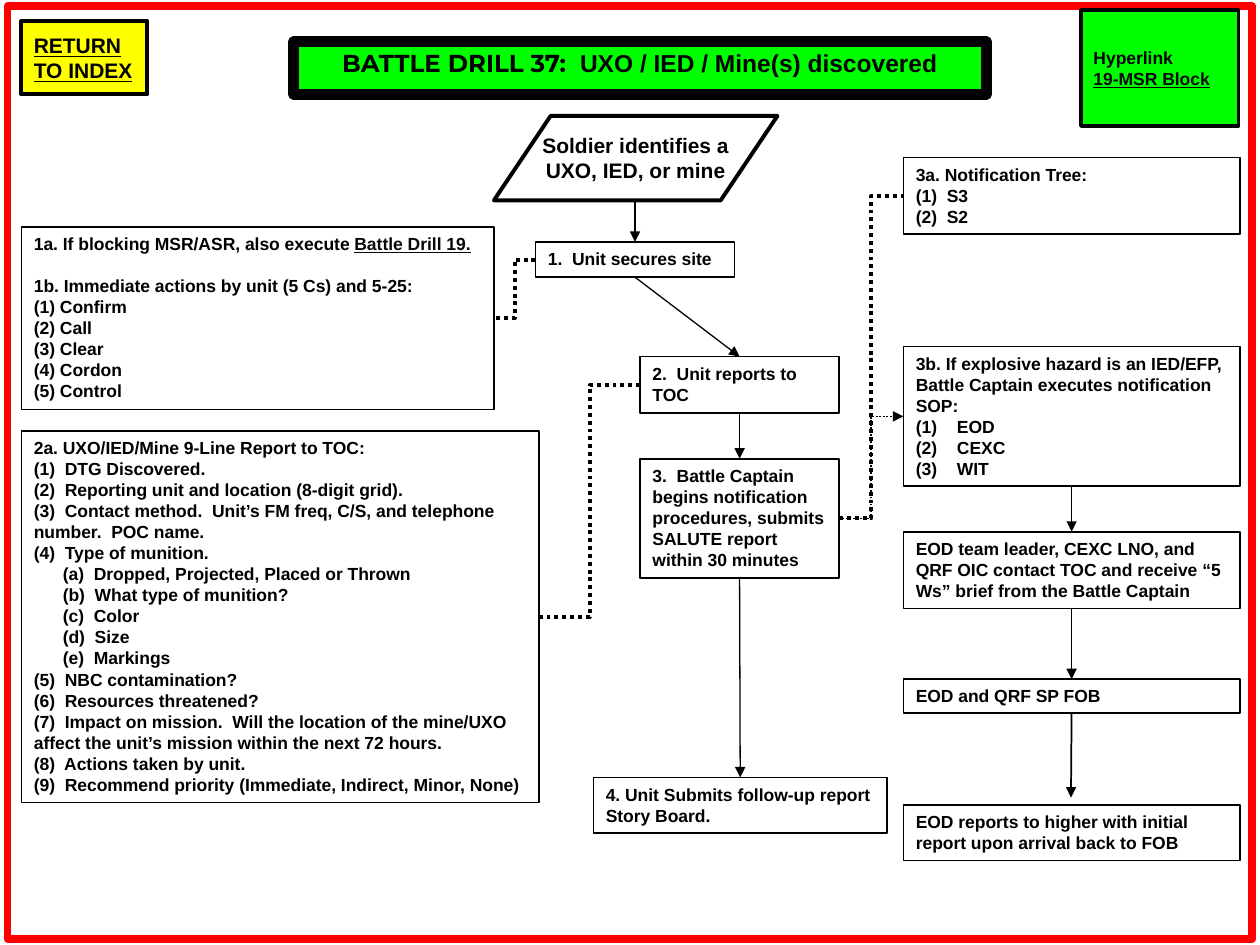
from lxml import etree
from pptx import Presentation
from pptx.dml.color import RGBColor
from pptx.enum.dml import MSO_LINE
from pptx.enum.shapes import MSO_CONNECTOR, MSO_SHAPE
from pptx.enum.text import MSO_ANCHOR, MSO_AUTO_SIZE, PP_ALIGN
from pptx.oxml.ns import qn
from pptx.util import Inches, Pt

RECT, PARALLELOGRAM = MSO_SHAPE.RECTANGLE, MSO_SHAPE.FLOWCHART_DATA
STRAIGHT, ELBOW = MSO_CONNECTOR.STRAIGHT, MSO_CONNECTOR.ELBOW
DOTTED = MSO_LINE.ROUND_DOT
LEFT, CENTER = PP_ALIGN.LEFT, PP_ALIGN.CENTER
TOP, MIDDLE = MSO_ANCHOR.TOP, MSO_ANCHOR.MIDDLE
GROW, FIXED = MSO_AUTO_SIZE.SHAPE_TO_FIT_TEXT, MSO_AUTO_SIZE.NONE
BLACK = RGBColor(0x00, 0x00, 0x00)
LINK = RGBColor(0x08, 0x08, 0x08)
WHITE = RGBColor(0xFF, 0xFF, 0xFF)
RED = RGBColor(0xFF, 0x00, 0x00)
YELLOW = RGBColor(0xFF, 0xFF, 0x00)
GREEN = RGBColor(0x00, 0xFF, 0x00)
TOP_SIDE, LEFT_SIDE, BOTTOM_SIDE, RIGHT_SIDE = range(4)


def add_run(p, text, size=10, font="Arial", color=BLACK, underline=None):
    r = p.add_run()
    r.text = text
    r.font.size, r.font.name, r.font.bold = Pt(size), font, True
    r.font.color.rgb = color
    r.font.underline = underline


def indent(p, left, hanging=0.0, numbered=False):
    pPr = p._p.get_or_add_pPr()
    pPr.set("marL", str(Inches(left)))
    pPr.set("indent", str(Inches(-hanging)))
    if numbered:
        etree.SubElement(pPr, qn("a:buFont")).set("typeface", "Arial")
        etree.SubElement(pPr, qn("a:buAutoNum")).set("type", "arabicParenBoth")


class Flowchart:
    def __init__(self, slide):
        self.slide = slide

    def shape(self, at, kind=RECT, fill=None, line=BLACK, width=1):
        sp = self.slide.shapes.add_shape(kind, *map(Inches, at))
        sp.shadow.inherit = False
        if fill is None:
            sp.fill.background()
        else:
            sp.fill.solid()
            sp.fill.fore_color.rgb = fill
        sp.line.color.rgb = line
        sp.line.width = Pt(width)
        return sp

    def fill_text(self, sp, paragraphs, align=LEFT, **fmt):
        """Each paragraph is a string or a list of (text, format) runs."""
        tf = sp.text_frame
        tf.word_wrap, tf.auto_size, tf.vertical_anchor = True, GROW, TOP
        for i, runs in enumerate(paragraphs):
            p = tf.add_paragraph() if i else tf.paragraphs[0]
            p.alignment = align
            for text, extra in [(runs, {})] if isinstance(runs, str) else runs:
                add_run(p, text, **{**fmt, **extra})
        return sp

    def box(self, at, *paragraphs, fill=None):
        return self.fill_text(self.shape(at, fill=fill), paragraphs)

    def button(self, at, fill, *paragraphs, **fmt):
        sp = self.fill_text(self.shape(at, fill=fill, width=2.25), paragraphs, **fmt)
        tf = sp.text_frame
        tf.word_wrap, tf.auto_size, tf.vertical_anchor = False, FIXED, MIDDLE

    def label(self, at, text, **fmt):
        sp = self.slide.shapes.add_textbox(*map(Inches, at))
        self.fill_text(sp, [text], **fmt)

    def link(self, start, end, kind=STRAIGHT, width=0.75, dash=None, arrow=True):
        """Each end is an (x, y) point in inches or a (shape, side) pair."""
        cxn = self.slide.shapes.add_connector(kind, 0, 0, 0, 0)
        if isinstance(start[0], float):
            cxn.begin_x, cxn.begin_y = map(Inches, start)
        else:
            cxn.begin_connect(*start)
        if isinstance(end[0], float):
            cxn.end_x, cxn.end_y = map(Inches, end)
        else:
            cxn.end_connect(*end)
        cxn.line.color.rgb, cxn.line.width = BLACK, Pt(width)
        if dash:
            cxn.line.dash_style = dash
        if arrow:
            ln = cxn._element.spPr.find(qn("a:ln"))
            etree.SubElement(ln, qn("a:tailEnd")).set("type", "triangle")
        etree.SubElement(cxn._element.spPr, qn("a:effectLst"))

    def dotted(self, start, end, width=2.25, arrow=False):
        self.link(start, end, ELBOW, width, DOTTED, arrow)


def main():
    prs = Presentation()
    prs.slide_width, prs.slide_height = Inches(10), Inches(7.5)
    chart = Flowchart(prs.slides.add_slide(prs.slide_layouts[6]))

    # Frame, title and buttons
    chart.shape((0.06, 0.05, 9.88, 7.4), line=RED, width=4.5)
    linked = {"color": LINK, "underline": True}
    chart.button((0.17, 0.17, 1, 0.58), YELLOW, "RETURN", "TO INDEX",
                 size=12, underline=True)
    chart.button((8.58, 0.08, 1.25, 0.92), GREEN,
                 "Hyperlink", [("19-MSR Block", linked)])
    title = chart.shape((2.33, 0.33, 5.5, 0.42), fill=GREEN, width=6)
    chart.fill_text(title, [[("BATTLE DRILL 37:", {"font": "Montserrat"}),
                             ("  UXO / IED / Mine(s) discovered", {})]],
                    align=CENTER, size=14)

    # Main steps
    chart.label((4.17, 1, 1.75, 0.5), "Soldier identifies a UXO, IED, or mine",
                align=CENTER, size=12)
    chart.shape((3.92, 0.92, 2.25, 0.67), PARALLELOGRAM, width=2.25)
    secure = chart.box((4.25, 1.92, 1.58, 0.28), "1.  Unit secures site")
    report = chart.box((5.08, 2.83, 1.58, 0.45), "2.  Unit reports to TOC")
    notify = chart.box(
        (5.08, 3.64, 1.58, 0.95),
        "3.  Battle Captain begins notification procedures, "
        "submits SALUTE report within 30 minutes")
    follow_up = chart.box((4.71, 6.17, 2.33, 0.44),
                          "4. Unit Submits follow-up report Story Board.")

    # Details on the left
    actions = chart.box(
        (0.17, 1.8, 3.75, 1.45),
        [("1a. If blocking MSR/ASR, also execute ", {}),
         ("Battle Drill 19.", linked)],
        "1b. Immediate actions by unit (5 Cs) and 5-25:",
        "(1) Confirm", "(2) Call", "(3) Clear", "(4) Cordon", "(5) Control",
        fill=WHITE)
    for p in actions.text_frame.paragraphs:
        indent(p, 0.5, 0.5)
    actions.text_frame.paragraphs[1].space_before = Pt(12)

    nine_line = chart.box(
        (0.17, 3.42, 4.11, 2.95),
        "2a. UXO/IED/Mine 9-Line Report to TOC:",
        "(1)  DTG Discovered.",
        "(2)  Reporting unit and location (8-digit grid).",
        "(3)  Contact method.  Unit’s FM freq, C/S, and telephone number.  POC name.",
        "(4)  Type of munition.",
        "(a)  Dropped, Projected, Placed or Thrown",
        "(b)  What type of munition?",
        "(c)  Color",
        "(d)  Size",
        "(e)  Markings",
        "(5)  NBC contamination?",
        "(6)  Resources threatened?",
        "(7)  Impact on mission.  Will the location of the mine/UXO affect "
        "the unit’s mission within the next 72 hours.",
        "(8)  Actions taken by unit.",
        "(9)  Recommend priority (Immediate, Indirect, Minor, None)")
    for p in nine_line.text_frame.paragraphs[5:10]:
        indent(p, 0.23)

    # Notification column on the right
    x, w = 7.17, 2.67
    tree = chart.box((x, 1.25, w, 0.61),
                     "3a. Notification Tree:", "(1)  S3", "(2)  S2")
    hazard = chart.box(
        (x, 2.75, w, 1.11),
        "3b. If explosive hazard is an IED/EFP, Battle Captain executes "
        "notification SOP:",
        "  EOD", "  CEXC", "  WIT")
    for p in hazard.text_frame.paragraphs[1:]:
        indent(p, 0.25, 0.25, numbered=True)
    brief = chart.box(
        (x, 4.22, w, 0.61),
        "EOD team leader, CEXC LNO, and QRF OIC contact TOC and receive "
        "“5 Ws” brief from the Battle Captain")
    depart = chart.box((x, 5.39, w, 0.27), "EOD and QRF SP FOB")
    chart.box((x, 6.39, w, 0.44),
              "EOD reports to higher with initial report upon arrival back to FOB")

    # Arrows down the flow
    chart.link((5.04, 1.6), (secure, TOP_SIDE))
    for upper, lower in ((secure, report), (report, notify), (notify, follow_up)):
        chart.link((upper, BOTTOM_SIDE), (lower, TOP_SIDE))
    for upper, lower in ((hazard, brief), (brief, depart)):
        chart.link((upper, BOTTOM_SIDE), (lower, TOP_SIDE), width=1)
    chart.link((depart, BOTTOM_SIDE), (8.5, 6.33), width=1)

    # Dotted links from steps to details
    chart.dotted((secure, LEFT_SIDE), (actions, RIGHT_SIDE))
    chart.dotted((report, LEFT_SIDE), (nine_line, RIGHT_SIDE))
    chart.dotted((notify, RIGHT_SIDE), (tree, LEFT_SIDE))
    chart.dotted((notify, RIGHT_SIDE), (hazard, LEFT_SIDE), width=1, arrow=True)

    prs.save("out.pptx")


if __name__ == "__main__":
    main()
